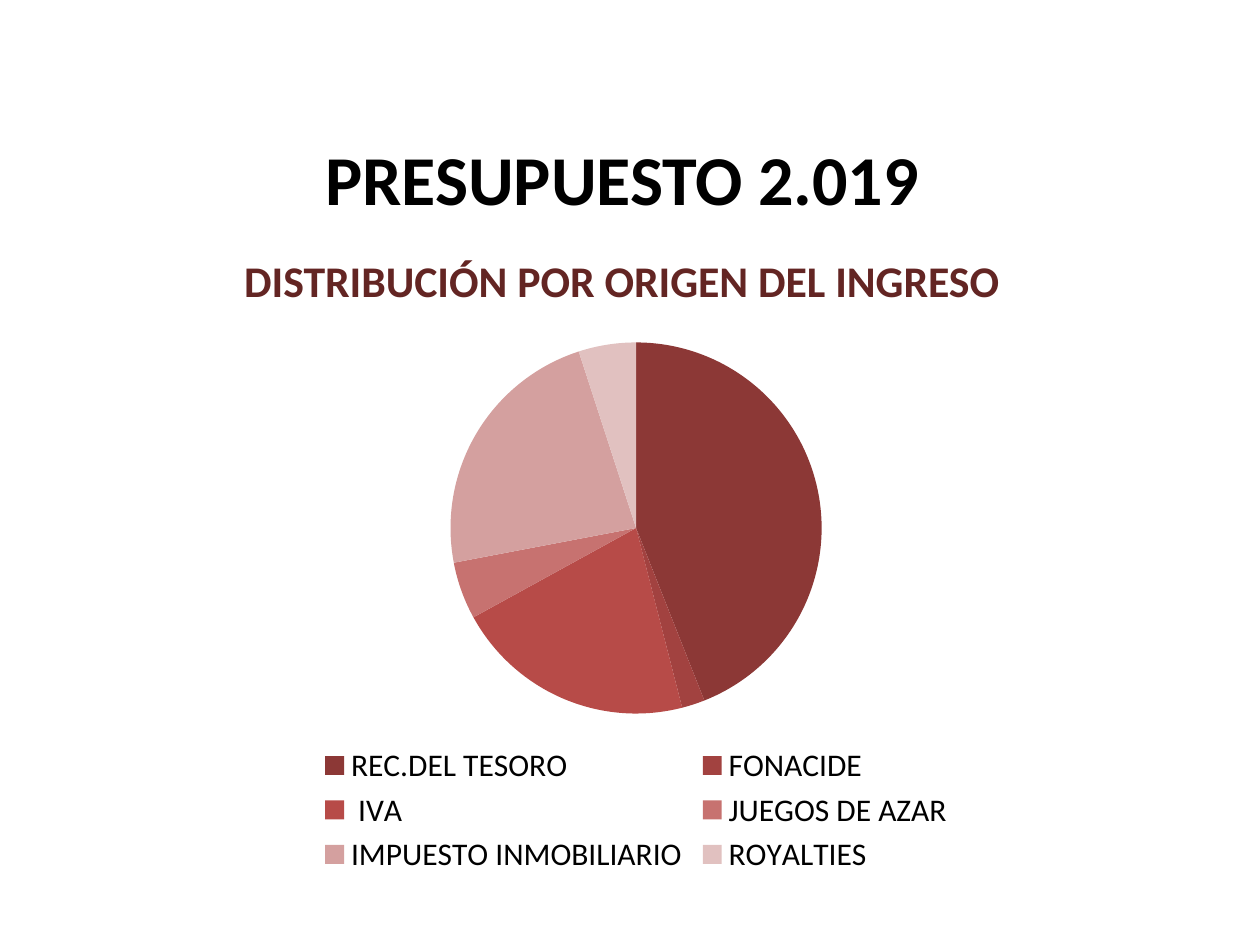
from pptx import Presentation
from pptx.chart.data import CategoryChartData
from pptx.dml.color import RGBColor
from pptx.enum.chart import XL_CHART_TYPE, XL_LEGEND_POSITION
from pptx.enum.text import MSO_ANCHOR, PP_ALIGN
from pptx.util import Pt

PIE = XL_CHART_TYPE.PIE
BOTTOM = XL_LEGEND_POSITION.BOTTOM
MIDDLE = MSO_ANCHOR.MIDDLE
CENTER = PP_ALIGN.CENTER

FONT = "Calibri"
COLORS = {
    "title": "000000",
    "subtitle": "632523",
    "legend": "000000",
}
INCOME = {
    "REC.DEL TESORO": (44, "8C3836"),
    "FONACIDE": (2, "A24240"),
    " IVA": (21, "B74B48"),
    "JUEGOS DE AZAR": (5, "C77270"),
    "IMPUESTO INMOBILIARIO": (23, "D4A09F"),
    "ROYALTIES": (5, "E1C1C0"),
}


def style_font(font, size, color, bold=False):
    font.name = FONT
    font.size = Pt(size)
    font.bold = bold
    font.color.rgb = RGBColor.from_string(color)


def add_heading(page, text, left, top, width, height, size, color):
    box = page.shapes.add_textbox(Pt(left), Pt(top), Pt(width), Pt(height))
    frame = box.text_frame
    frame.word_wrap = True
    frame.vertical_anchor = MIDDLE
    frame.text = text
    para = frame.paragraphs[0]
    para.alignment = CENTER
    para.line_spacing = 0.9
    style_font(para.runs[0].font, size, color, bold=True)


def add_income_pie(page, left, top, width, height):
    data = CategoryChartData()
    data.categories = list(INCOME)
    data.add_series("Series 1", [value for value, color in INCOME.values()])
    chart = page.shapes.add_chart(
        PIE, Pt(left), Pt(top), Pt(width), Pt(height), data
    ).chart
    style_font(chart.font, 18, COLORS["legend"])
    chart.has_title = False
    chart.has_legend = True
    chart.legend.position = BOTTOM
    chart.legend.include_in_layout = False
    plot = chart.plots[0]
    plot.vary_by_categories = True
    for index, (value, color) in enumerate(INCOME.values()):
        fill = plot.series[0].points[index].format.fill
        fill.solid()
        fill.fore_color.rgb = RGBColor.from_string(color)


def main():
    deck = Presentation()
    deck.slide_width = Pt(720)
    deck.slide_height = Pt(540)
    page = deck.slides.add_slide(deck.slide_layouts[6])
    add_heading(page, "DISTRIBUCIÓN POR ORIGEN DEL INGRESO",
                28, 145.5, 654.5, 32.5, 25, COLORS["subtitle"])
    add_heading(page, "PRESUPUESTO 2.019",
                6, 83, 699, 42.5, 40, COLORS["title"])
    add_income_pie(page, 78.5, 185.75, 570, 317)
    deck.save("out.pptx")


if __name__ == "__main__":
    main()
